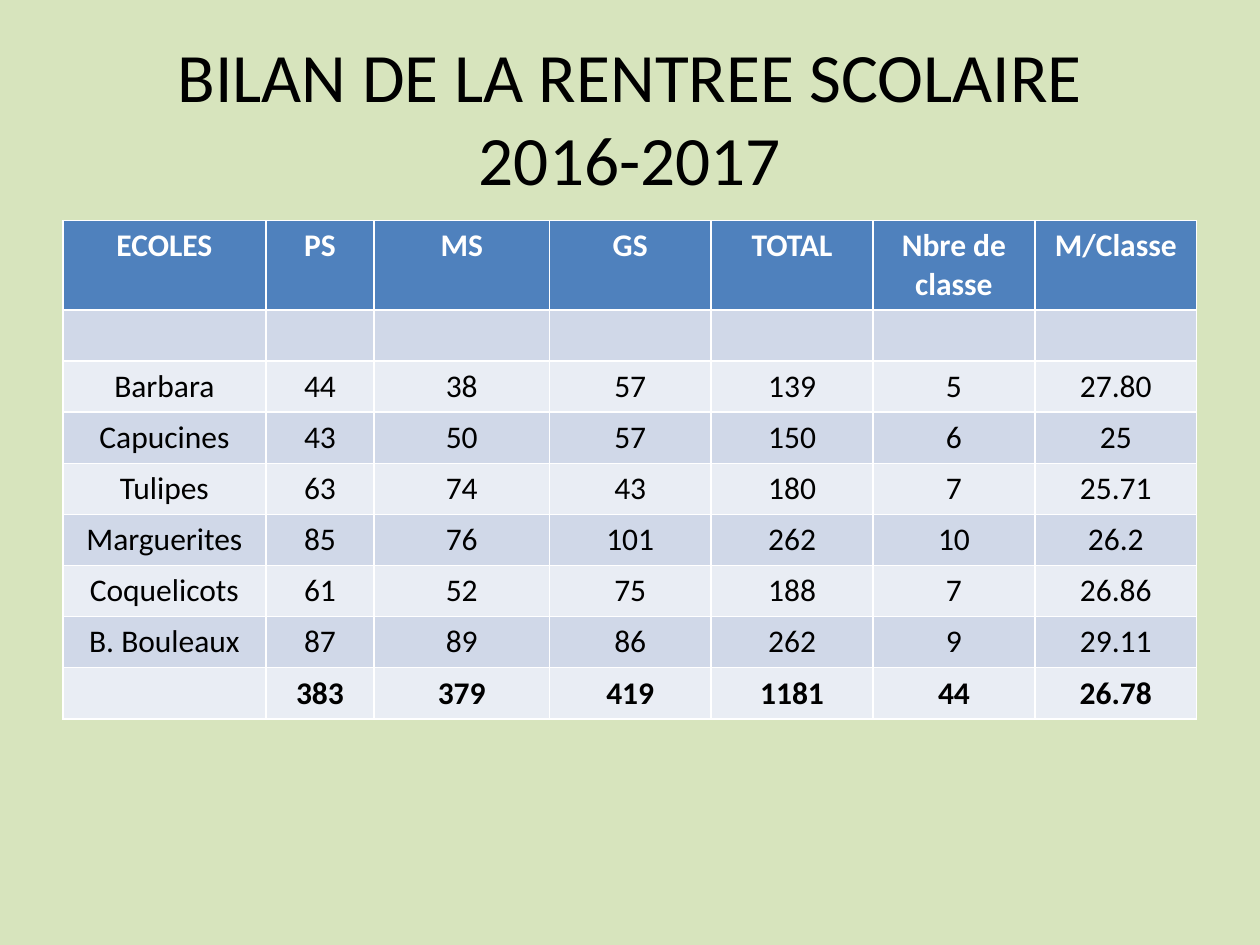
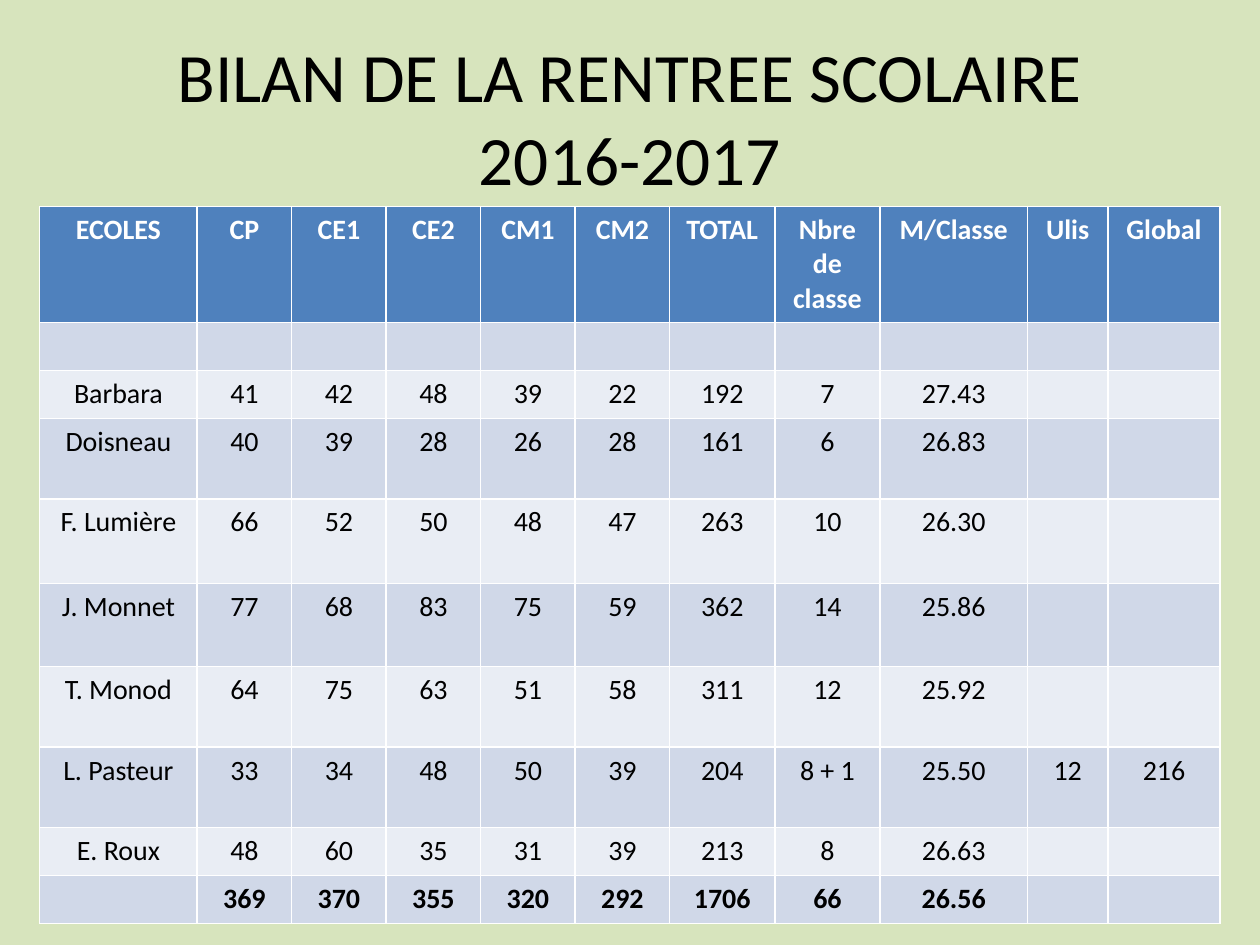
"""Builds two slides of school enrolment tables for the 2016-2017 school year."""
from pptx import Presentation
from pptx.dml.color import RGBColor
from pptx.enum.text import MSO_ANCHOR, MSO_AUTO_SIZE, PP_ALIGN
from pptx.util import Inches, Pt

BACKGROUND = RGBColor(0xD7, 0xE4, 0xBD)
HEADER_FILL = RGBColor(0x4F, 0x81, 0xBD)
DARK_BAND = RGBColor(0xD0, 0xD8, 0xE8)
LIGHT_BAND = RGBColor(0xE9, 0xED, 0xF4)
WHITE = RGBColor(0xFF, 0xFF, 0xFF)
BLACK = RGBColor(0, 0, 0)
FONT = "Calibri"
TITLE_LINES = ("BILAN DE LA RENTREE SCOLAIRE", "2016-2017")

NURSERY = {
    "top": 1.75,
    "size": 18,
    "columns": [1.61, 0.86, 1.39] + [1.285] * 4,
    "rows": [0.71] + [0.405] * 8,
    "cells": [
        ["ECOLES", "PS", "MS", "GS", "TOTAL", "Nbre de classe", "M/Classe"],
        [],
        ["Barbara", "44", "38", "57", "139", "5", "27.80"],
        ["Capucines", "43", "50", "57", "150", "6", "25"],
        ["Tulipes", "63", "74", "43", "180", "7", "25.71"],
        ["Marguerites", "85", "76", "101", "262", "10", "26.2"],
        ["Coquelicots", "61", "52", "75", "188", "7", "26.86"],
        ["B. Bouleaux", "87", "89", "86", "262", "9", "29.11"],
        ["", "383", "379", "419", "1181", "44", "26.78"],
    ],
}
PRIMARY = {
    "top": 1.64,
    "size": 16,
    "columns": [1.25] + [0.75] * 5 + [0.835] * 2 + [1.17, 0.64, 0.89],
    "rows": [0.92, 0.38, 0.38, 0.64, 0.67, 0.66, 0.64, 0.64, 0.38, 0.38],
    "cells": [
        ["ECOLES", "CP", "CE1", "CE2", "CM1", "CM2", "TOTAL", "Nbre de classe",
         "M/Classe", "Ulis", "Global"],
        [],
        ["Barbara", "41", "42", "48", "39", "22", "192", "7", "27.43"],
        ["Doisneau", "40", "39", "28", "26", "28", "161", "6", "26.83"],
        ["F. Lumière", "66", "52", "50", "48", "47", "263", "10", "26.30"],
        ["J. Monnet", "77", "68", "83", "75", "59", "362", "14", "25.86"],
        ["T. Monod", "64", "75", "63", "51", "58", "311", "12", "25.92"],
        ["L. Pasteur", "33", "34", "48", "50", "39", "204", "8 + 1", "25.50", "12", "216"],
        ["E. Roux", "48", "60", "35", "31", "39", "213", "8", "26.63"],
        ["", "369", "370", "355", "320", "292", "1706", "66", "26.56"],
    ],
}


def add_run(paragraph, text, size, color, bold=False):
    run = paragraph.add_run()
    run.text = text
    run.font.name = FONT
    run.font.size = Pt(size)
    run.font.color.rgb = color
    run.font.bold = bold


presentation = Presentation()
presentation.slide_width = Inches(10)
presentation.slide_height = Inches(7.5)
master_fill = presentation.slide_master.background.fill
master_fill.solid()
master_fill.fore_color.rgb = BACKGROUND
title_only = presentation.slide_layouts[5]

for school_table in (NURSERY, PRIMARY):
    slide = presentation.slides.add_slide(title_only)

    title = slide.shapes.title
    title.left, title.top = Inches(0.5), Inches(0.3)
    title.width, title.height = Inches(9), Inches(1.25)
    title.text_frame.auto_size = MSO_AUTO_SIZE.NONE
    title.text_frame.vertical_anchor = MSO_ANCHOR.MIDDLE
    paragraph = title.text_frame.paragraphs[0]
    paragraph.alignment = PP_ALIGN.CENTER
    add_run(paragraph, TITLE_LINES[0], 39.6, BLACK)
    paragraph.add_line_break()
    add_run(paragraph, TITLE_LINES[1], 39.6, BLACK)

    columns, rows = school_table["columns"], school_table["rows"]
    width, height = sum(columns), sum(rows)
    table = slide.shapes.add_table(
        len(rows), len(columns), Inches((10 - width) / 2), Inches(school_table["top"]),
        Inches(width), Inches(height)).table
    for column, column_width in zip(table.columns, columns):
        column.width = Inches(column_width)

    for row_index, row in enumerate(table.rows):
        row.height = Inches(rows[row_index])
        is_header = row_index == 0
        is_total = row_index == len(rows) - 1
        band = DARK_BAND if row_index % 2 else LIGHT_BAND
        values = school_table["cells"][row_index]
        for column_index, cell in enumerate(row.cells):
            cell.fill.solid()
            cell.fill.fore_color.rgb = HEADER_FILL if is_header else band
            paragraph = cell.text_frame.paragraphs[0]
            paragraph.alignment = PP_ALIGN.CENTER
            if column_index < len(values) and values[column_index]:
                add_run(paragraph, values[column_index], school_table["size"],
                        WHITE if is_header else BLACK, is_header or is_total)
            else:
                end_properties = paragraph._p.get_or_add_endParaRPr()
                end_properties.set("sz", str(school_table["size"] * 100))

presentation.save("out.pptx")
